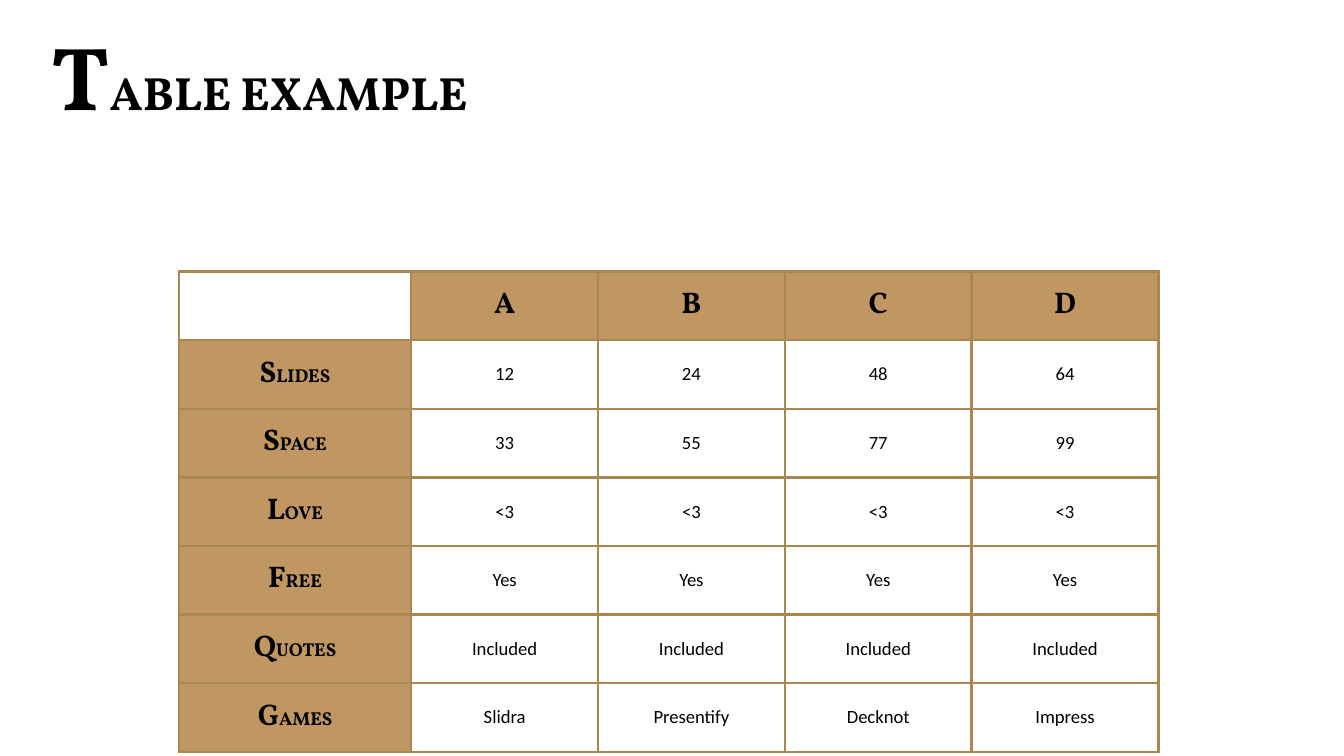
from pptx import Presentation
from pptx.dml.color import RGBColor
from pptx.enum.text import MSO_ANCHOR as Anchor, MSO_AUTO_SIZE as AutoSize, PP_ALIGN as Align
from pptx.oxml.ns import qn
from pptx.util import Inches, Pt
from lxml.etree import SubElement

BLACK = RGBColor(0x00, 0x00, 0x00)
TAN = RGBColor(0xC0, 0x97, 0x62)
BROWN = RGBColor(0xAA, 0x86, 0x51)

COLUMNS = ["A", "B", "C", "D"]
ROWS = [
    ("Slides", ["12", "24", "48", "64"]),
    ("Space", ["33", "55", "77", "99"]),
    ("Love", ["<3"] * 4),
    ("Free", ["Yes"] * 4),
    ("Quotes", ["Included"] * 4),
    ("Games", ["Slidra", "Presentify", "Decknot", "Impress"]),
]


class Deck:
    """Holds the table slide and its style."""

    heading_font = "Vollkorn"
    body_font = "Calibri"

    def __init__(self):
        self.prs = Presentation()
        self.prs.slide_width = Inches(10)
        self.prs.slide_height = Inches(10) * 9 // 16
        self.s = self.prs.slides.add_slide(self.prs.slide_layouts[5])

    def run(self, p, text, size, font, bold):
        r = p.add_run()
        r.text = text
        r.font.size = Pt(size)
        r.font.name = font
        r.font.bold = bold
        r.font.color.rgb = BLACK

    def heading(self, p, text, big, small):
        self.run(p, text[0], big, self.heading_font, True)
        if text[1:]:
            self.run(p, text[1:].upper(), small, self.heading_font, True)

    def title(self, text, left, top, width, height):
        sp = self.s.shapes.title
        sp.left, sp.top = Inches(left), Inches(top)
        sp.width, sp.height = Inches(width), Inches(height)
        tf = sp.text_frame
        tf.auto_size = AutoSize.NONE
        tf.word_wrap = True
        tf.vertical_anchor = Anchor.MIDDLE
        tf.margin_left = tf.margin_right = tf.margin_top = tf.margin_bottom = Inches(0.1)
        p = tf.paragraphs[0]
        p.alignment = Align.LEFT
        self.heading(p, text, 48, 25)

    def borders(self, cell):
        tcPr = cell._tc.get_or_add_tcPr()
        for side in ("a:lnL", "a:lnR", "a:lnT", "a:lnB"):
            ln = SubElement(tcPr, qn(side), w=str(Pt(1.5)))
            fill = SubElement(ln, qn("a:solidFill"))
            SubElement(fill, qn("a:srgbClr"), val=str(BROWN))

    def cell(self, cell, text, is_heading):
        cell.vertical_anchor = Anchor.MIDDLE
        cell.margin_left = cell.margin_right = Inches(0.1)
        cell.margin_top = cell.margin_bottom = Inches(0.1)
        self.borders(cell)
        if is_heading and text:
            cell.fill.solid()
            cell.fill.fore_color.rgb = TAN
        else:
            cell.fill.background()
        p = cell.text_frame.paragraphs[0]
        p.alignment = Align.CENTER
        if text and is_heading:
            self.heading(p, text, 16, 10)
        elif text:
            self.run(p, text, 10, self.body_font, False)

    def table(self, columns, rows, left, top, widths, row_height):
        grid = [["", *columns]] + [[name, *values] for name, values in rows]
        frame = self.s.shapes.add_table(
            len(grid), len(widths), Inches(left), Inches(top),
            Inches(sum(widths)), Inches(row_height * len(grid)))
        tbl = frame.table
        tbl.first_row = tbl.horz_banding = False
        for column, width in zip(tbl.columns, widths):
            column.width = Inches(width)
        for i, texts in enumerate(grid):
            for j, text in enumerate(texts):
                self.cell(tbl.cell(i, j), text, i == 0 or j == 0)

    def save(self):
        self.prs.save("out.pptx")


def main():
    deck = Deck()
    deck.title("Table example", 0.28, 0.13, 9.43, 0.85)
    deck.table(COLUMNS, ROWS, 1.33, 2.02, [1.73] + [1.39] * 4, 0.33)
    deck.save()


if __name__ == "__main__":
    main()
